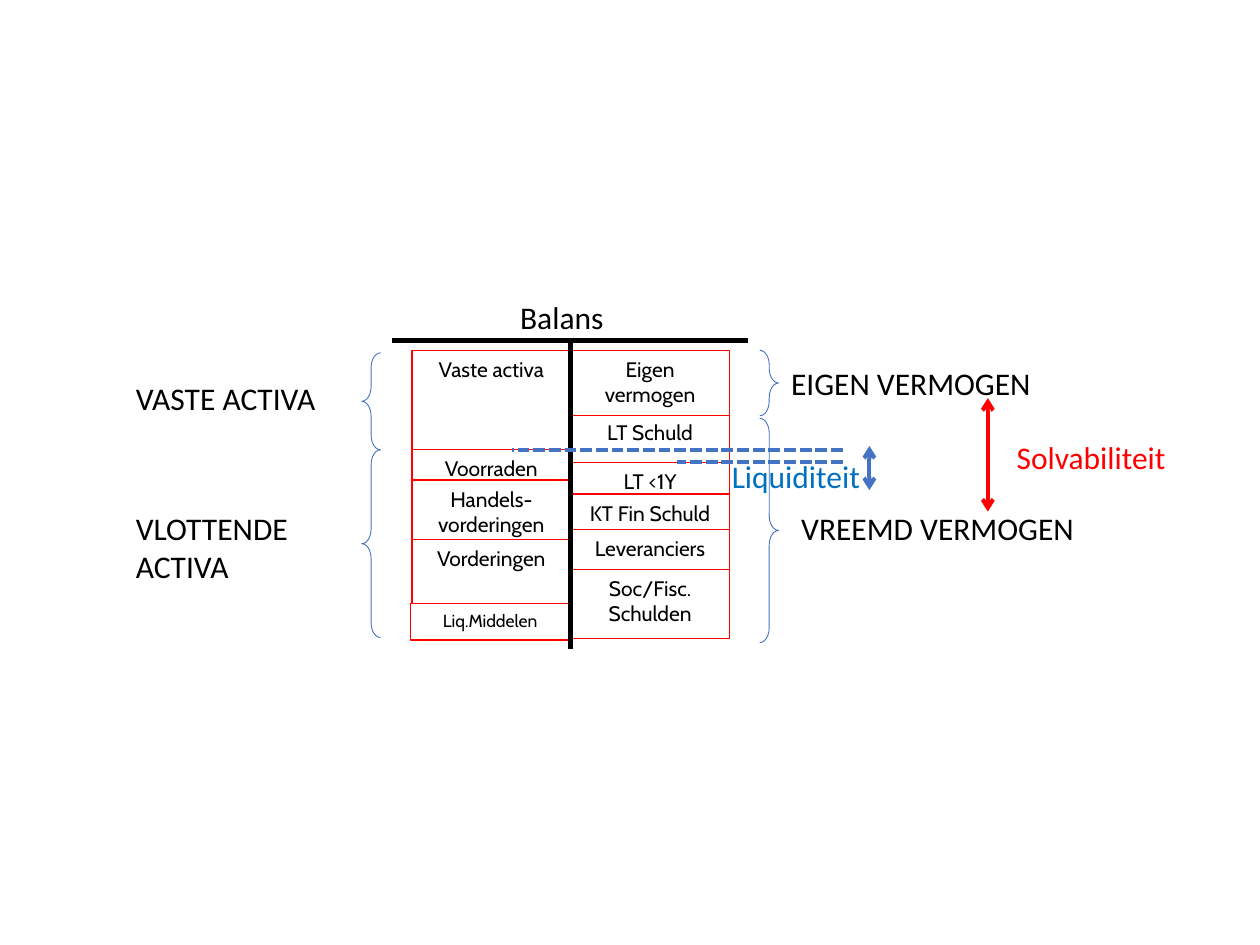
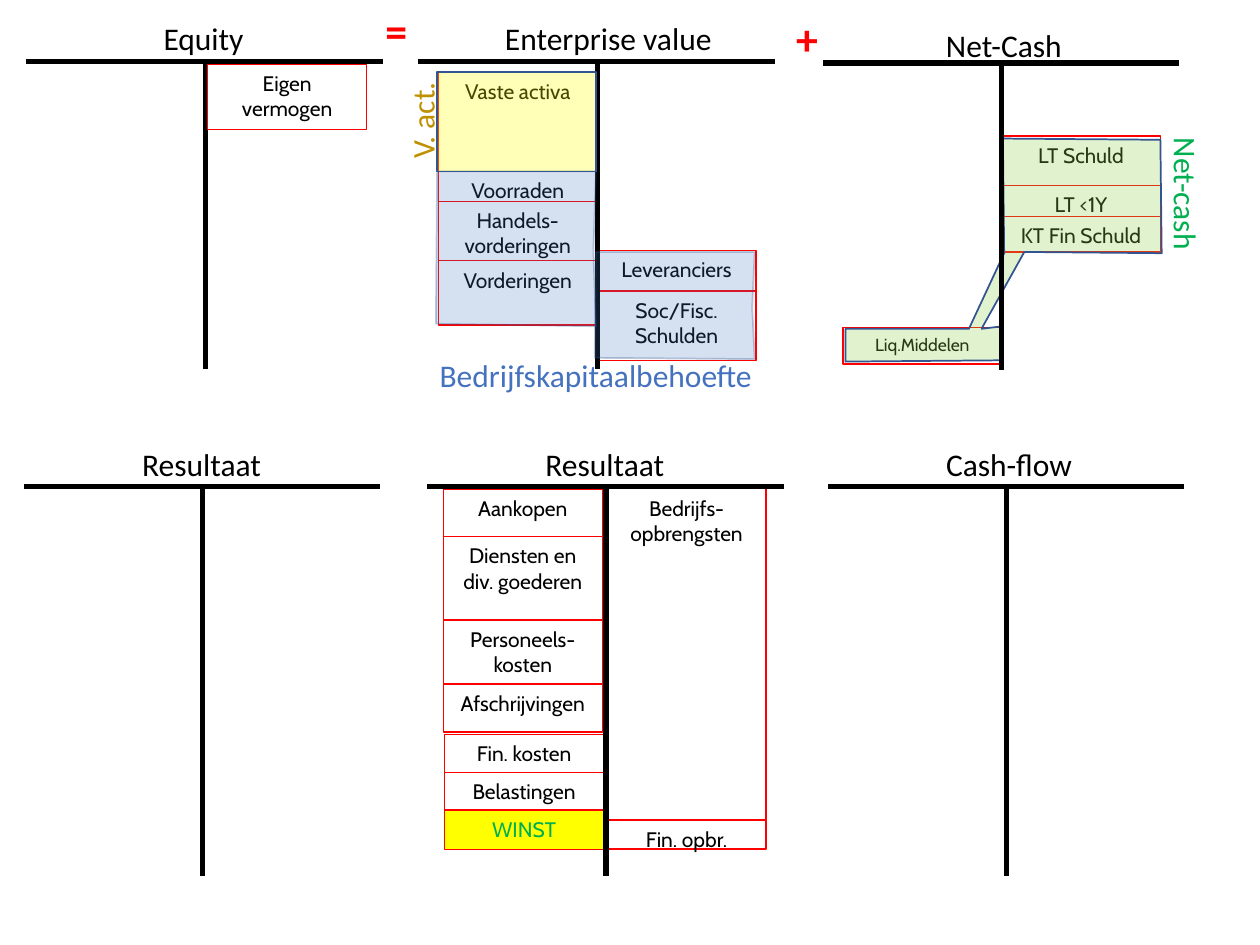
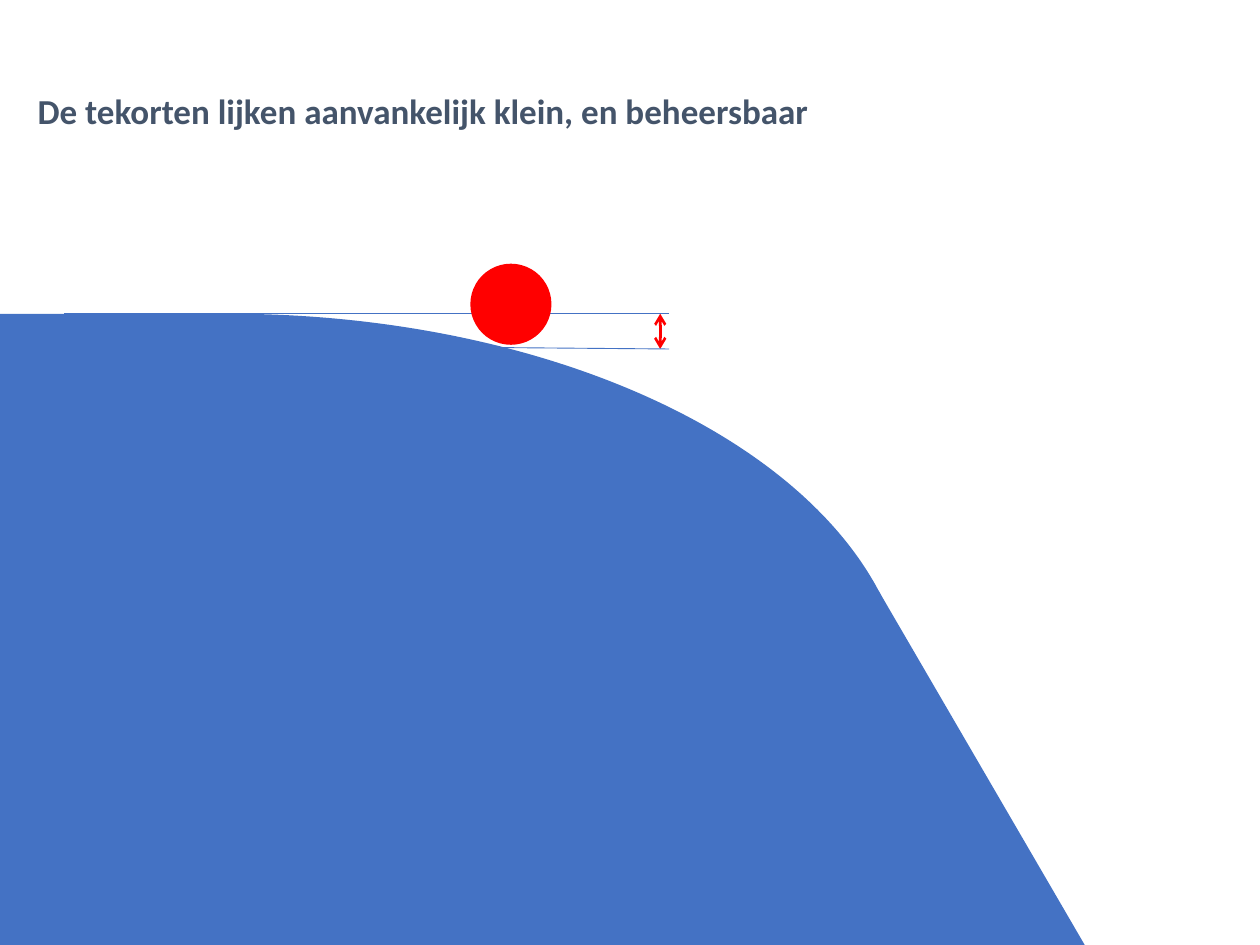
from dataclasses import dataclass
from itertools import pairwise
from typing import Optional

from lxml.etree import SubElement
from pptx import Presentation
from pptx.dml.color import RGBColor
from pptx.enum.dml import MSO_LINE
from pptx.enum.shapes import MSO_CONNECTOR, MSO_SHAPE
from pptx.enum.text import MSO_ANCHOR, MSO_AUTO_SIZE, PP_ALIGN
from pptx.oxml.ns import qn
from pptx.util import Inches, Pt

COLORS = {
    "black": "000000", "white": "FFFFFF", "red": "FF0000", "yellow": "FFFF00",
    "blue": "4472C4", "need": "4472BE", "edge": "325491", "soft_edge": "2F528F",
    "liquidity": "0070C0", "green": "00B050", "lime": "92D050",
    "gold": "BF9000", "slate": "44546A",
}
BODY_FONT, BLOCK_FONT = "Calibri", "Cabin"
BLOCK_W = 1.26
BAR_W, STEM_OFFSET = 2.83, 1.42
LABEL_H = 0.4


@dataclass(frozen=True)
class Block:
    text: str
    height: float
    size: int = 12
    color: str = "black"
    fill: str = "white"


@dataclass(frozen=True)
class Label:
    text: str
    left: float
    top: float
    width: float
    height: float = LABEL_H
    color: str = "black"
    size: int = 18
    bold: bool = False
    wrap: bool = False
    rotation: float = 0


@dataclass(frozen=True)
class Account:
    title: str
    title_left: float
    title_width: float
    left: float
    top: float
    depth: float
    title_rise: float = 0.38


@dataclass(frozen=True)
class Highlight:
    points: tuple
    fill: str
    fill_alpha: int
    line: str
    line_alpha: int = 100


FIXED = Block("Vaste activa", 0.79)
CURRENT = [Block("Voorraden", 0.24), Block("Handels-vorderingen", 0.47),
           Block("Vorderingen", 0.51)]
CASH = Block("Liq.Middelen", 0.29, size=10)
EQUITY = Block("Eigen vermogen", 0.52)
LOANS = [Block("LT Schuld", 0.39), Block("LT <1Y", 0.25), Block("KT Fin Schuld", 0.28)]
PAYABLES = [Block("Leveranciers", 0.32), Block("Soc/Fisc.\nSchulden", 0.55)]
OPERATING_COSTS = [Block("Aankopen", 0.38), Block("Diensten en div. goederen", 0.66),
                   Block("Personeels-kosten", 0.51), Block("Afschrijvingen", 0.38)]
CLOSING_COSTS = [Block("Fin. kosten", 0.3), Block("Belastingen", 0.3),
                 Block("WINST", 0.31, color="green", fill="yellow")]
INCOME = [Block("Bedrijfs-opbrengsten", 2.63), Block("Fin. opbr.", 0.23)]

BALANCE = Account("Balans", 4.03, 0.97, 3.11, 2.7, 2.45)
ENTERPRISE = Account("Enterprise value", 3.91, 1.86, 3.32, 0.49, 2.44, 0.39)
NET_CASH = Account("Net-Cash", 7.41, 1.14, 6.53, 0.5, 2.44, 0.34)
EQUITY_ACCOUNT = Account("Equity", 1.2, 0.84, 0.21, 0.49, 2.44, 0.39)
FLOW_ACCOUNTS = [
    Account("Resultaat", 4.23, 1.15, 3.39, 3.86, 3.09),
    Account("Resultaat", 1.03, 1.15, 0.19, 3.86, 3.09),
    Account("Cash-flow", 7.41, 1.21, 6.57, 3.86, 3.09),
]

BALANCE_LABELS = [
    Label("VASTE ACTIVA", 0.98, 2.96, 1.96),
    Label("VLOTTENDE ACTIVA", 0.98, 3.99, 1.96, 0.71, wrap=True),
    Label("EIGEN VERMOGEN", 6.18, 2.84, 2.53),
    Label("VREEMD VERMOGEN", 6.26, 3.99, 2.82),
    Label("Solvabiliteit", 7.97, 3.43, 1.48, color="red"),
    Label("Liquiditeit", 5.71, 3.58, 1.23, color="liquidity"),
]
BRACES = [(6.03, 2.78, 0.52, 0), (2.87, 2.8, 0.77, 180),
          (2.87, 3.57, 1.49, 180), (6.03, 3.32, 1.78, 0)]
VALUE_LABELS = [
    Label("Net-cash", 8.86, 1.35, 1.11, color="green", rotation=90),
    Label("Bedrijfskapitaalbehoefte", 3.39, 2.78, 2.71, color="need"),
    Label("=", 2.96, -0.02, 0.38, 0.52, "red", 25, True),
    Label("+", 6.22, 0.04, 0.38, 0.52, "red", 25, True),
    Label("V. act.", 2.94, 0.75, 0.82, color="gold", rotation=270),
]
HIGHLIGHTS = [
    Highlight(((3.47, 1.36), (4.73, 1.36), (4.71, 1.99), (4.73, 2.59), (3.46, 2.57)),
              "need", 22, "soft_edge", 31),
    Highlight(((3.47, 0.57), (4.73, 0.57), (4.73, 1.36), (3.47, 1.36)),
              "yellow", 28, "edge"),
    Highlight(((8.13, 2), (9.22, 2.01), (9.21, 1.11), (7.96, 1.1), (7.97, 2.01),
               (7.69, 2.61), (6.71, 2.61), (6.71, 2.87), (7.96, 2.86), (7.96, 2.59),
               (7.79, 2.61)), "lime", 27, "edge"),
    Highlight(((4.73, 2), (5.99, 2), (5.97, 2.44), (5.99, 2.85), (4.72, 2.84)),
              "need", 22, "soft_edge", 31),
]


def rgb(name: str) -> RGBColor:
    return RGBColor.from_string(COLORS[name])


def style_shape(sp, fill: Optional[str], line: Optional[str] = None, width: float = 1) -> None:
    sp.shadow.inherit = False
    if fill:
        sp.fill.solid()
        sp.fill.fore_color.rgb = rgb(fill)
    else:
        sp.fill.background()
    if line:
        sp.line.color.rgb = rgb(line)
        sp.line.width = Pt(width)
    else:
        sp.line.fill.background()


def add_preset(s, kind, left: float, top: float, width: float, height: float,
               fill: Optional[str], line: Optional[str] = None,
               line_width: float = 1, rotation: float = 0):
    sp = s.shapes.add_shape(kind, Inches(left), Inches(top), Inches(width), Inches(height))
    style_shape(sp, fill, line, line_width)
    sp.rotation = rotation
    return sp


def set_alpha(sp, holder: str, percent: int) -> None:
    for clr in sp._element.spPr.xpath(f"{holder}/a:srgbClr"):
        SubElement(clr, qn("a:alpha")).set("val", str(percent * 1000))


def add_line(s, start: tuple, end: tuple, color: str, width: float,
             dashed: bool = False, arrows: bool = False) -> None:
    cx = s.shapes.add_connector(MSO_CONNECTOR.STRAIGHT,
                                *(Inches(v) for v in (*start, *end)))
    cx.line.color.rgb = rgb(color)
    cx.line.width = Pt(width)
    if dashed:
        cx.line.dash_style = MSO_LINE.SQUARE_DOT
    if arrows:
        ln = cx.line._get_or_add_ln()
        for tag in ("a:headEnd", "a:tailEnd"):
            SubElement(ln, qn(tag)).set("type", "arrow")
    SubElement(cx._element.spPr, qn("a:effectLst"))


def set_text(tf, text: str, font: str, size: int, color: str,
             bold: bool = False, align=PP_ALIGN.LEFT) -> None:
    tf.text = text
    for p in tf.paragraphs:
        p.alignment = align
        p.font.name = font
        p.font.size = Pt(size)
        p.font.bold = bold
        p.font.color.rgb = rgb(color)


def add_label(s, label: Label, anchor=MSO_ANCHOR.TOP, grow: bool = True) -> None:
    tb = s.shapes.add_textbox(Inches(label.left), Inches(label.top),
                              Inches(label.width), Inches(label.height))
    tb.rotation = label.rotation
    tf = tb.text_frame
    tf.word_wrap = label.wrap
    tf.auto_size = MSO_AUTO_SIZE.SHAPE_TO_FIT_TEXT if grow else MSO_AUTO_SIZE.NONE
    tf.vertical_anchor = anchor
    set_text(tf, label.text, BODY_FONT, label.size, label.color, label.bold)


def add_stack(s, left: float, top: float, blocks: list[Block]) -> None:
    for block in blocks:
        sp = add_preset(s, MSO_SHAPE.RECTANGLE, left, top, BLOCK_W, block.height,
                        block.fill, "red", 0.75)
        tf = sp.text_frame
        tf.word_wrap = True
        tf.vertical_anchor = MSO_ANCHOR.TOP
        set_text(tf, block.text, BLOCK_FONT, block.size, block.color, align=PP_ALIGN.CENTER)
        top += block.height


def add_account(s, account: Account) -> None:
    stem = account.left + STEM_OFFSET
    add_line(s, (account.left, account.top), (account.left + BAR_W, account.top), "black", 3)
    add_line(s, (stem, account.top), (stem, account.top + account.depth), "black", 3)
    add_label(s, Label(account.title, account.title_left, account.top - account.title_rise,
                       account.title_width))


def add_highlight(s, highlight: Highlight) -> None:
    first, *rest = [(Inches(x), Inches(y)) for x, y in highlight.points]
    builder = s.shapes.build_freeform(*first)
    builder.add_line_segments(rest, close=True)
    sp = builder.convert_to_shape()
    style_shape(sp, highlight.fill, highlight.line)
    set_alpha(sp, "a:solidFill", highlight.fill_alpha)
    if highlight.line_alpha < 100:
        set_alpha(sp, "a:ln/a:solidFill", highlight.line_alpha)


def build_balance(s) -> None:
    add_stack(s, 3.27, 2.78, [FIXED, *CURRENT])
    add_stack(s, 3.26, 4.79, [CASH])
    add_stack(s, 4.53, 3.28, LOANS + PAYABLES)
    add_stack(s, 4.53, 2.78, [EQUITY])
    add_account(s, BALANCE)
    for left, top, height, rotation in BRACES:
        brace = add_preset(s, MSO_SHAPE.RIGHT_BRACE, left, top, 0.15, height,
                           None, "blue", 0.5, rotation)
        brace.adjustments[0] = 0.776
        brace.adjustments[1] = 0.5
    for label in BALANCE_LABELS:
        add_label(s, label)
    add_line(s, (7.84, 3.16), (7.84, 4.06), "red", 2.25, arrows=True)
    for left, y in ((4.06, 3.57), (5.37, 3.67)):
        add_line(s, (6.69, y), (left, y), "blue", 2.25, dashed=True)
    add_line(s, (6.9, 3.54), (6.9, 3.89), "blue", 2.25, arrows=True)


def build_value(s) -> None:
    add_stack(s, 3.48, 0.57, [FIXED, *CURRENT])
    add_stack(s, 7.95, 1.08, LOANS)
    add_stack(s, 4.74, 1.99, PAYABLES)
    add_stack(s, 6.69, 2.6, [CASH])
    add_account(s, ENTERPRISE)
    for highlight in HIGHLIGHTS:
        add_highlight(s, highlight)
    add_account(s, NET_CASH)
    add_account(s, EQUITY_ACCOUNT)
    add_stack(s, 1.65, 0.51, [EQUITY])
    add_stack(s, 4.82, 3.88, INCOME)
    add_stack(s, 3.52, 3.88, OPERATING_COSTS)
    add_stack(s, 3.53, 5.83, CLOSING_COSTS)
    for account in FLOW_ACCOUNTS:
        add_account(s, account)
    for label in VALUE_LABELS:
        add_label(s, label)


def build_slope(s) -> None:
    add_preset(s, MSO_SHAPE.OVAL, -3.58, 2.49, 10.79, 6.22, "blue")
    add_preset(s, MSO_SHAPE.RECTANGLE, -0.59, 2.49, 2.4, 0.39, "blue")
    add_preset(s, MSO_SHAPE.RECTANGLE, 4.88, 5.78, 3.99, 2.55, "blue", rotation=59.8)
    add_label(s, Label("De tekorten lijken aanvankelijk klein, en beheersbaar",
                       0.2, 0.05, 9.22, 1.65, "slate", 20, True, True),
              MSO_ANCHOR.MIDDLE, grow=False)
    add_line(s, (5.24, 2.49), (5.24, 2.77), "red", 1.5, arrows=True)
    for right_y, left_y in ((2.49, 2.49), (2.77, 2.73)):
        add_line(s, (5.31, right_y), (0.51, left_y), "blue", 0.5)
    add_preset(s, MSO_SHAPE.OVAL, 3.74, 2.1, 0.63, 0.63, "red", "red")


def main() -> None:
    prs = Presentation()
    prs.slide_width, prs.slide_height = Inches(10), Inches(7.5)
    for build in (build_balance, build_value, build_slope):
        build(prs.slides.add_slide(prs.slide_layouts[6]))
    prs.save("out.pptx")


if __name__ == "__main__":
    main()
